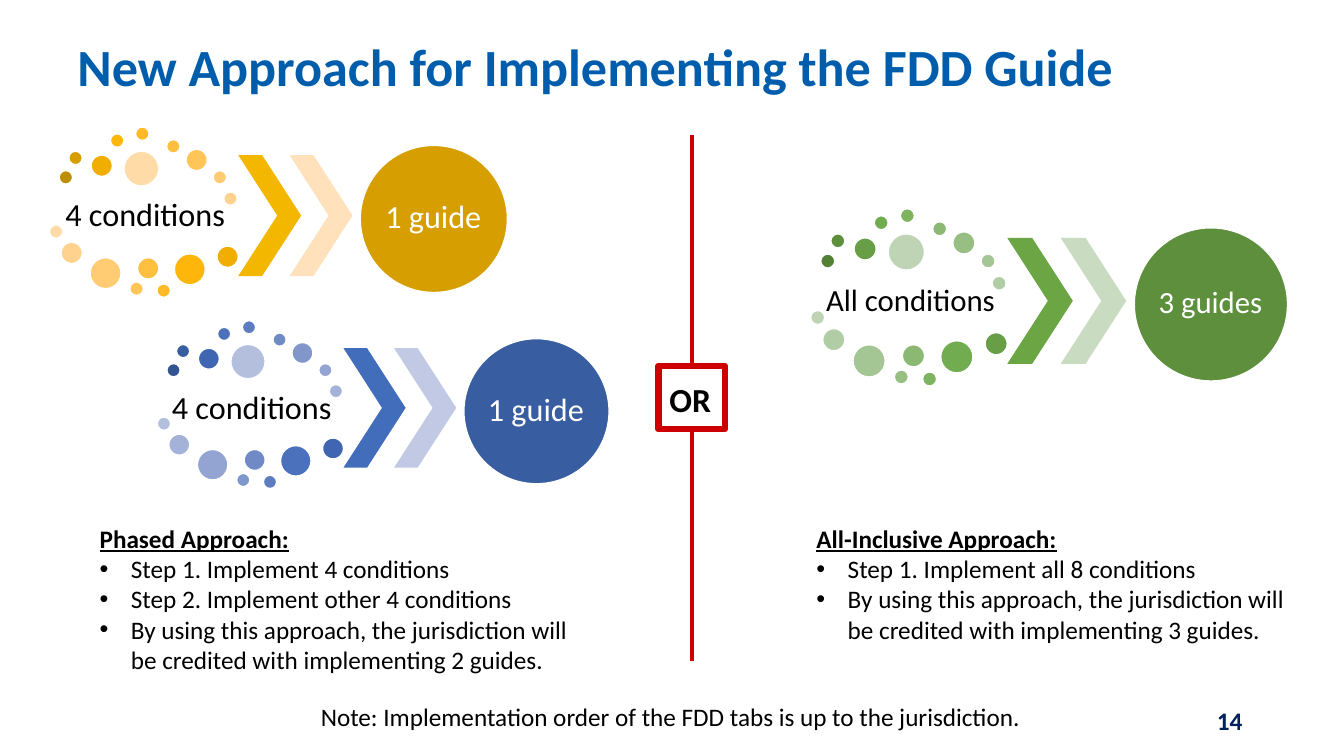
"""Build the slide comparing the phased and all-inclusive approaches."""
from pptx import Presentation
from pptx.dml.color import RGBColor
from pptx.enum.shapes import MSO_CONNECTOR, MSO_SHAPE as SHAPE
from pptx.enum.text import MSO_ANCHOR as ANCHOR, PP_ALIGN as ALIGN
from pptx.oxml.ns import qn
from pptx.util import Pt
from lxml import etree

PX = 9144
FONT = "Calibri"
COLORS = {"title": "005DAB", "text": "000000", "white": "FFFFFF",
          "divider": "CC0000", "number": "002060"}
TITLE = "New Approach for Implementing the FDD Guide"
NOTE = "Note: Implementation order of the FDD tabs is up to the jurisdiction."

DIAGRAMS = [
    {"at": (804, 207), "circle": 152, "size": 22,
     "labels": ("All conditions", "3 guides"), "chevrons": ("6BA544", "C9DBC1"),
     "dots": ("538035", "5D8F3D", "679E46", "72AC50", "7EB360",
              "8BB872", "97BF83", "A4C594", "B1CDA5", "BED4B5")},
    {"at": (49, 126), "circle": 146, "size": 23,
     "labels": ("4 conditions", "1 guide"), "chevrons": ("F4B700", "FFE2BC"),
     "dots": ("BD8E00", "D79E00", "F1AD00", "FFB60B", "FFBA25",
              "FFBF3F", "FFC559", "FFCB73", "FFD38D", "FFDCA7")},
    {"at": (156, 318), "circle": 144, "size": 23,
     "labels": ("4 conditions", "1 guide"), "chevrons": ("416DBB", "C1C9E4"),
     "dots": ("325491", "395DA1", "4166B1", "4C71BC", "5E7DC1",
              "708AC6", "8197CC", "93A4D2", "A4B1D8", "B4BFDE")},
]
FULL_CIRCLE = 152
UPPER_DOTS = [(10, 45, 14), (20, 25, 14), (43, 29, 22), (63, 7, 14), (89, 0, 14),
              (121, 13, 14), (141, 23, 22), (169, 45, 14), (180, 67, 14), (77, 25, 36)]
LOWER_DOTS = [(0, 101, 14), (12, 119, 22), (42, 135, 32), (83, 160, 14),
              (91, 135, 22), (111, 162, 14), (129, 131, 32), (173, 123, 22)]
CHEVRON_LEFTS = (195, 248)

APPROACHES = [
    ((89, 514, 487, 162), "Phased Approach:",
     ["Step 1. Implement 4 conditions",
      "Step 2. Implement other 4 conditions",
      "By using this approach, the jurisdiction will be credited with implementing 2 guides."]),
    ((800, 514, 487, 131), "All-Inclusive Approach:",
     ["Step 1. Implement all 8 conditions",
      "By using this approach, the jurisdiction will be credited with implementing 3 guides."]),
]


def emu(*lengths):
    return [round(n * PX) for n in lengths]


def rgb(value):
    return RGBColor.from_string(value)


def add_paragraph(tf, text, size=18, color=COLORS["text"], bold=False, underline=False,
                  align=ALIGN.LEFT, spacing=None, bullet=False):
    p = tf.paragraphs[0] if not tf.paragraphs[0].runs else tf.add_paragraph()
    p.alignment = align
    if spacing:
        p.line_spacing = spacing
    if bullet:
        indent, = emu(31)
        pPr = p._p.get_or_add_pPr()
        pPr.set("marL", str(indent))
        pPr.set("indent", str(-indent))
        etree.SubElement(pPr, qn("a:buFont")).set("typeface", "Arial")
        etree.SubElement(pPr, qn("a:buChar")).set("char", "•")
    r = p.add_run()
    r.text = text
    r.font.name, r.font.size = FONT, Pt(size)
    r.font.bold, r.font.underline = bold, underline
    r.font.color.rgb = rgb(color)


def add_box(shapes, box, inset=None, anchor=ANCHOR.TOP):
    tf = shapes.add_textbox(*emu(*box)).text_frame
    tf.word_wrap = True
    tf.vertical_anchor = anchor
    if inset is not None:
        tf.margin_left = tf.margin_right = tf.margin_top = tf.margin_bottom = inset * PX
    return tf


def add_shape(shapes, kind, box, fill, line=None, width=1):
    sp = shapes.add_shape(kind, *emu(*box))
    sp.shadow.inherit = False
    sp.fill.solid()
    sp.fill.fore_color.rgb = rgb(fill)
    if line:
        sp.line.color.rgb = rgb(line)
        sp.line.width = Pt(width)
    else:
        sp.line.fill.background()
    return sp


def add_diagram(slide, diagram):
    shapes = slide.shapes.add_group_shape().shapes
    left, top = diagram["at"]
    scale = diagram["circle"] / FULL_CIRCLE
    conditions, guides = diagram["labels"]
    dots = diagram["dots"]
    label = {"size": diagram["size"], "align": ALIGN.CENTER, "spacing": 0.9}

    def place(x, y, w, h):
        return left + x * scale, top + y * scale, w * scale, h * scale

    tf = add_box(shapes, place(10, 63, 178, 59), 3, ANCHOR.MIDDLE)
    add_paragraph(tf, conditions, **label)
    for (x, y, d), color in zip(UPPER_DOTS + LOWER_DOTS, dots + dots[:1:-1]):
        add_shape(shapes, SHAPE.OVAL, place(x, y, d, d), color, COLORS["white"])
    for x, color in zip(CHEVRON_LEFTS, diagram["chevrons"]):
        sp = add_shape(shapes, SHAPE.CHEVRON, place(x, 29, 65, 125), color)
        sp.adjustments[0] = 0.62
    add_shape(shapes, SHAPE.OVAL, place(321, 19, FULL_CIRCLE, FULL_CIRCLE),
              dots[1], COLORS["white"])
    tf = add_box(shapes, place(343, 41, 107, 107), 0, ANCHOR.MIDDLE)
    add_paragraph(tf, guides, color=COLORS["white"], **label)


def add_divider(shapes):
    line = shapes.add_connector(MSO_CONNECTOR.STRAIGHT, *emu(686, 134, 686, 656))
    line.line.color.rgb = rgb(COLORS["divider"])
    line.line.width = Pt(3)
    etree.SubElement(line._element.spPr, qn("a:effectLst"))
    add_shape(shapes, SHAPE.RECTANGLE, (653, 363, 66, 63),
              COLORS["white"], COLORS["divider"], 4.5)
    add_paragraph(add_box(shapes, (654, 371, 71, 50)), "OR", size=24, bold=True)


def main():
    prs = Presentation()
    prs.slide_width, prs.slide_height = emu(1333, 750)
    slide = prs.slides.add_slide(prs.slide_layouts[6])
    shapes = slide.shapes
    add_paragraph(add_box(shapes, (67, 30, 1200, 71), anchor=ANCHOR.BOTTOM), TITLE,
                  size=37.3, color=COLORS["title"], bold=True, spacing=Pt(40))
    for diagram in DIAGRAMS:
        add_diagram(slide, diagram)
    for box, heading, steps in APPROACHES:
        tf = add_box(shapes, box)
        add_paragraph(tf, heading, bold=True, underline=True)
        for step in steps:
            add_paragraph(tf, step, bullet=True)
    add_divider(shapes)
    add_paragraph(add_box(shapes, (254, 691, 822, 40)), NOTE, align=ALIGN.CENTER)
    add_paragraph(add_box(shapes, (942, 695, 300, 40), anchor=ANCHOR.MIDDLE), "14",
                  color=COLORS["number"], bold=True, align=ALIGN.RIGHT)
    prs.save("out.pptx")


if __name__ == "__main__":
    main()
